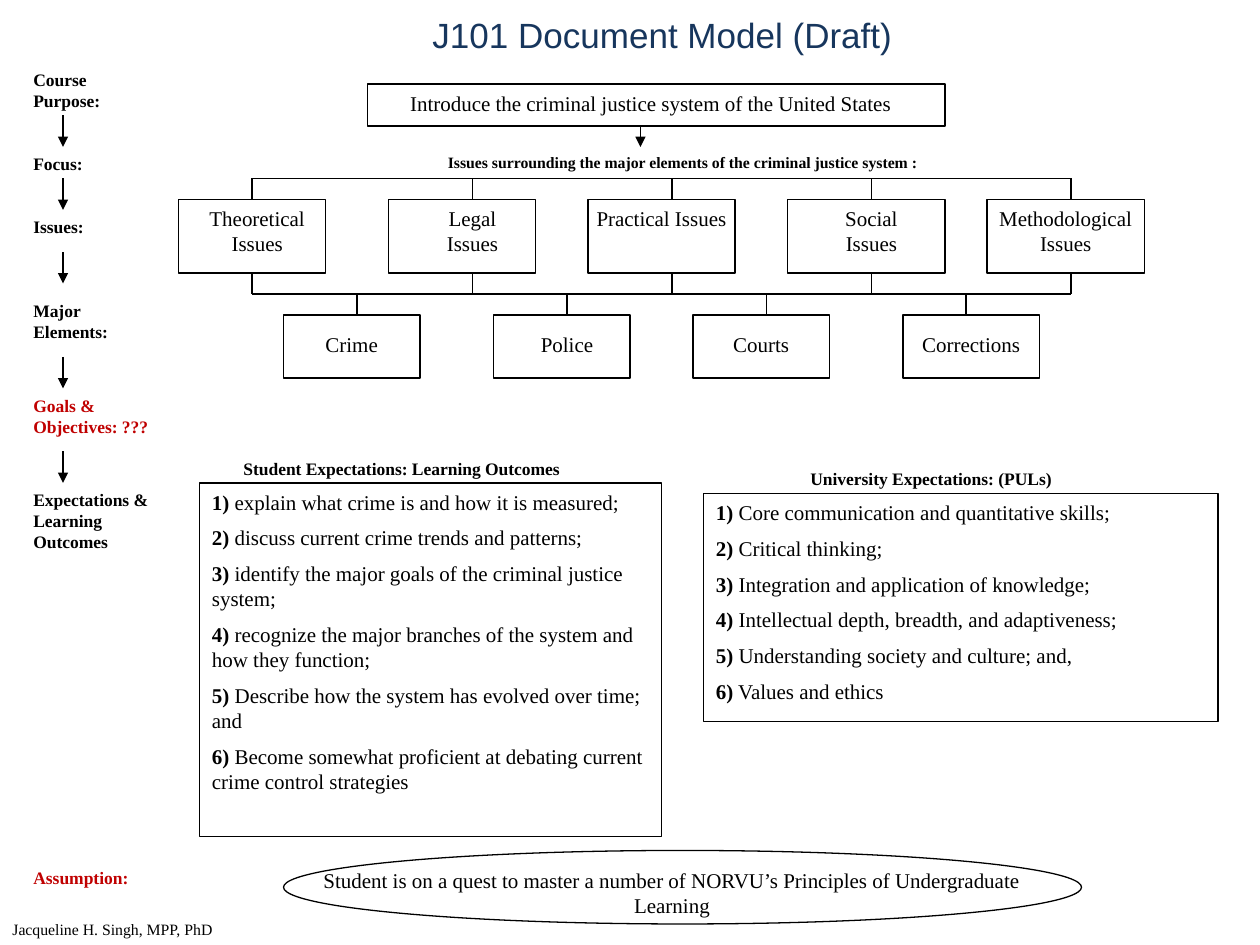
from lxml import etree
from pptx import Presentation
from pptx.dml.color import RGBColor
from pptx.enum.shapes import MSO_CONNECTOR, MSO_SHAPE
from pptx.enum.text import MSO_ANCHOR, PP_ALIGN
from pptx.oxml.ns import qn
from pptx.util import Inches, Pt

BLACK = RGBColor(0, 0, 0)
RED = RGBColor(0xC0, 0, 0)
NAVY = RGBColor(0x17, 0x36, 0x5D)
RECT, OVAL = MSO_SHAPE.RECTANGLE, MSO_SHAPE.OVAL
STRAIGHT = MSO_CONNECTOR.STRAIGHT
LEFT, CENTER = PP_ALIGN.LEFT, PP_ALIGN.CENTER
MIDDLE, TOP = MSO_ANCHOR.MIDDLE, MSO_ANCHOR.TOP
SIDE_TOP, SIDE_BOTTOM = 0, 2

COLS, ROWS = 120, 90  # grid cells of 1/12 inch
CELL = Inches(10) // COLS

BODY = {"name": "Times New Roman", "size": Pt(12), "bold": False}
LABEL = {**BODY, "size": Pt(10), "bold": True}
CAPTION = {**LABEL, "size": Pt(9)}
CREDIT = {**BODY, "size": Pt(9)}
TITLE = {"name": "Arial", "size": Pt(20), "bold": False}

# text, top row, columns, lines, colour
STAGES = [
    ("Course Purpose:", 6, 12, 2, BLACK),
    ("Focus:", 14, 12, 1, BLACK),
    ("Issues:", 20, 12, 1, BLACK),
    ("Major Elements:", 28, 12, 2, BLACK),
    ("Goals & Objectives: ???", 37, 16, 2, RED),
    ("Expectations & Learning Outcomes", 46, 15, 3, BLACK),
    ("Assumption:", 82, 14, 1, RED),
]
STAGE_ARROWS = [11, 17, 24, 34, 43]

# text, text column, text columns, box column, box columns, branch column
ISSUES = [
    ("Theoretical Issues", 18, 13, 17, 14, 24),
    ("Legal Issues", 39, 12, 37, 14, 45),
    ("Practical Issues", 55, 16, 56, 14, 64),
    ("Social Issues", 77, 12, 75, 15, 83),
    ("Methodological Issues", 92, 19, 94, 15, 102),
]
ELEMENTS = [
    ("Crime", 28, 11, 27, 13, 34),
    ("Police", 49, 10, 47, 13, 54),
    ("Courts", 67, 11, 66, 13, 73),
    ("Corrections", 86, 13, 86, 13, 92),
]
OUTCOMES = [
    "explain what crime is and how it is measured;",
    "discuss current crime trends and patterns;",
    "identify the major goals of the criminal justice system;",
    "recognize the major branches of the system and how they function;",
    "Describe how the system has evolved over time; and",
    "Become somewhat proficient at debating current crime control strategies",
]
PRINCIPLES = [
    "Core communication and quantitative skills;",
    "Critical thinking;",
    "Integration and application of knowledge;",
    "Intellectual depth, breadth, and adaptiveness;",
    "Understanding society and culture; and,",
    "Values and ethics",
]


def cells(*values):
    return [round(v * CELL) for v in values]


def add_run(p, text, style, color=BLACK):
    r = p.add_run()
    r.text = text
    for key, value in style.items():
        setattr(r.font, key, value)
    r.font.color.rgb = color


def add_text(s, text, box, style, color=BLACK, align=LEFT, anchor=TOP, wrap=True):
    tf = s.shapes.add_textbox(*cells(*box)).text_frame
    tf.word_wrap = wrap
    tf.vertical_anchor = anchor
    p = tf.paragraphs[0]
    p.alignment = align
    add_run(p, text, style, color)


def add_outline(s, kind, box):
    sp = s.shapes.add_shape(kind, *cells(*box))
    sp.shadow.inherit = False
    sp.fill.background()
    sp.line.color.rgb = BLACK
    sp.line.width = Pt(0.75)
    return sp


def add_line(s, x1, y1, x2, y2, arrow=False):
    line = s.shapes.add_connector(STRAIGHT, *cells(x1, y1, x2, y2))
    line.line.color.rgb = BLACK
    line.line.width = Pt(0.75)
    sp_pr = line._element.spPr
    if arrow:
        etree.SubElement(sp_pr.find(qn("a:ln")), qn("a:tailEnd"), type="triangle")
    etree.SubElement(sp_pr, qn("a:effectLst"))
    return line


def add_numbered_box(s, items, box):
    tf = add_outline(s, RECT, box).text_frame
    tf.word_wrap = True
    tf.vertical_anchor = TOP
    for number, item in enumerate(items, 1):
        p = tf.paragraphs[0] if number == 1 else tf.add_paragraph()
        p.alignment = LEFT
        p.space_before = Pt(6 if number > 1 else 0)
        add_run(p, f"{number})", {**BODY, "bold": True})
        add_run(p, f" {item}", BODY)


def add_box_row(s, row, top, height, text_top, rail_above, rail_below=None):
    """Boxes hung from the rail above and, if given, tied to the rail below."""
    bottom = top + height
    for text, text_x, text_w, x, w, branch in row:
        sp = add_outline(s, RECT, (x, top, w, height))
        centred = 2 * branch == 2 * x + w
        drop = add_line(s, branch, rail_above, branch, top)
        if centred:
            drop.end_connect(sp, SIDE_TOP)
        if rail_below is not None:
            tie = add_line(s, branch, bottom, branch, rail_below)
            if centred:
                tie.begin_connect(sp, SIDE_BOTTOM)
        add_text(s, text, (text_x, text_top, text_w, 6), BODY, align=CENTER)


def add_stages(s):
    for text, top, width, lines, color in STAGES:
        add_text(s, text, (2, top, width, 2 * lines + 1.2), LABEL, color)
    for top in STAGE_ARROWS:
        add_line(s, 6, top, 6, top + 3, arrow=True)


def add_hierarchy(s):
    add_outline(s, RECT, (35, 8, 55, 4))
    add_text(s, "Introduce the criminal justice system of the United States",
             (35, 8, 54, 3.6), BODY, align=CENTER)
    add_line(s, 61, 12, 61, 14, arrow=True)
    add_text(s, "Issues surrounding the major elements of the criminal justice system :",
             (38, 14, 54, 3), CAPTION, align=CENTER)
    for rail in (17, 28):
        add_line(s, ISSUES[0][-1], rail, ISSUES[-1][-1], rail)
    add_box_row(s, ISSUES, 19, 7, 19, rail_above=17, rail_below=28)
    add_box_row(s, ELEMENTS, 30, 6, 31, rail_above=28)


def add_expectations(s):
    add_text(s, "Student Expectations: Learning Outcomes", (22, 43, 41, 3.2), LABEL)
    add_numbered_box(s, OUTCOMES, (19, 46, 44, 33.7))
    add_text(s, "University Expectations: (PULs)", (76, 44, 29, 3.2), LABEL)
    add_numbered_box(s, PRINCIPLES, (67, 47, 49, 21.7))


def add_assumption(s):
    add_outline(s, OVAL, (27, 81, 76, 7))
    add_text(s, "Student is on a quest to master a number of NORVU’s "
                "Principles of Undergraduate Learning",
             (29, 82, 70, 6), BODY, align=CENTER)


def main():
    prs = Presentation()
    prs.slide_width, prs.slide_height = cells(COLS, ROWS)
    s = prs.slides.add_slide(prs.slide_layouts[6])
    add_text(s, "J101 Document Model (Draft)", (40, -0.4, 50, 7.4), TITLE, NAVY,
             anchor=MIDDLE)
    add_stages(s)
    add_hierarchy(s)
    add_expectations(s)
    add_assumption(s)
    add_text(s, "Jacqueline H. Singh, MPP, PhD", (0, 87, 22.2, 3), CREDIT, wrap=False)
    prs.save("out.pptx")


if __name__ == "__main__":
    main()
